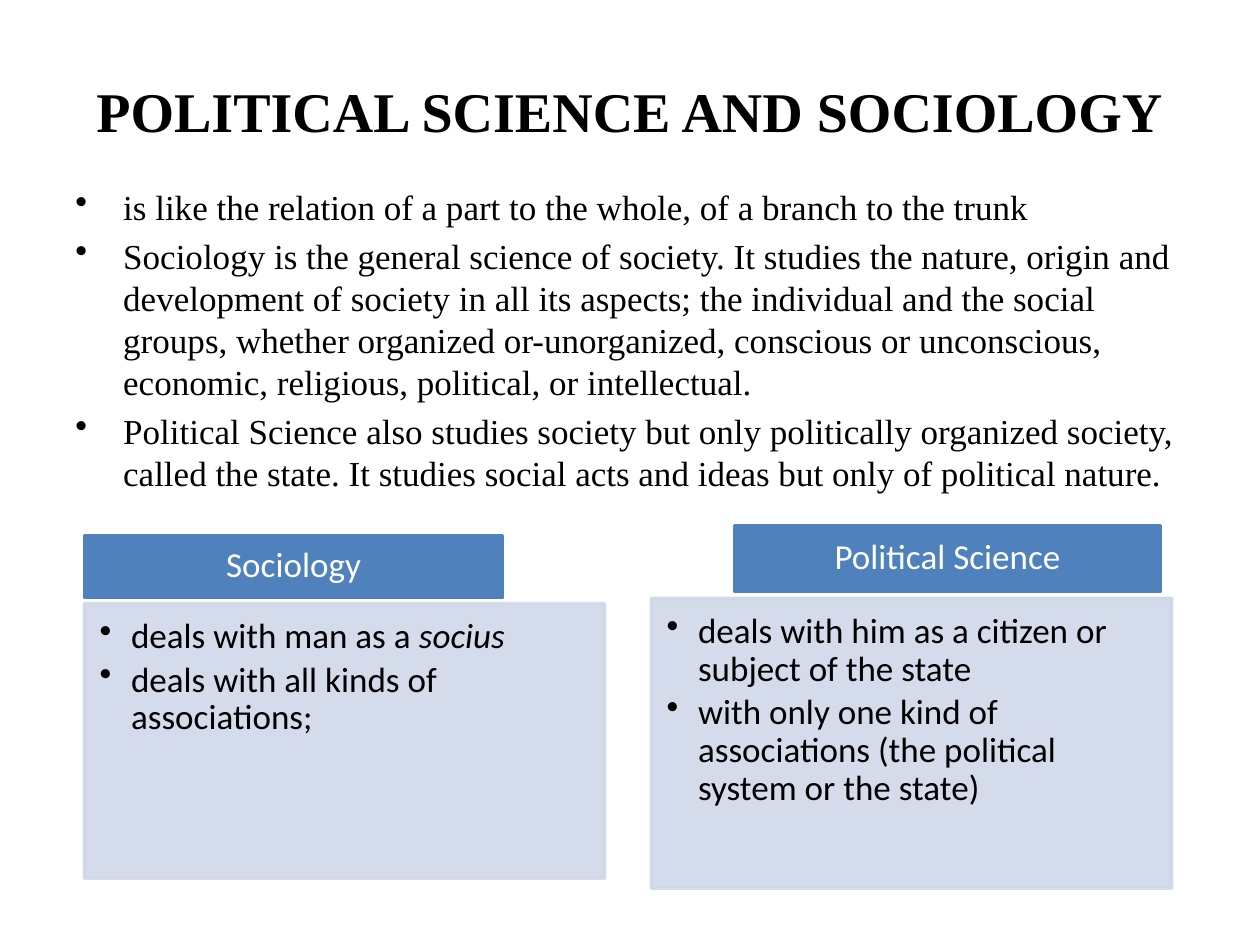
"""Build the slide comparing political science with sociology."""
from dataclasses import dataclass

from lxml import etree
from pptx import Presentation, util as u
from pptx.dml import color
from pptx.enum import shapes, text
from pptx.oxml import ns

PX = 9144
COLORS = {"ink": "000000", "white": "FFFFFF", "header": "4F81BD", "panel": "D0D8E8"}
SERIF, SANS = "Times New Roman", "Calibri"


@dataclass(frozen=True)
class Box:
    left: int
    top: int
    width: int
    height: int

    def emu(self) -> list[int]:
        return [side * PX for side in (self.left, self.top, self.width, self.height)]


@dataclass(frozen=True)
class Style:
    font: str
    size: int = 20
    ink: str = "ink"
    bold: bool = False
    centered: bool = False
    indent: int = 0
    before: int = 0
    after: int = 0
    spacing: float = 1.0
    margins: tuple[int, int, int, int] = (10, 5, 10, 5)


@dataclass(frozen=True)
class Column:
    heading: str
    header: Box
    points: list[str]
    panel: Box
    emphasis: str = ""


TITLE = Style(SERIF, size=32, bold=True, centered=True)
BODY = Style(SERIF, indent=38, before=4)
HEADER = Style(SANS, ink="white", centered=True, spacing=0.9, margins=(16, 9, 16, 9))
PANEL = Style(SANS, indent=25, after=3, spacing=0.9, margins=(12, 12, 16, 17))

STATEMENTS = [
    "is like the relation of a part to the whole, of a branch to the trunk",
    "Sociology is the general science of society. It studies the nature, origin and "
    "development of society in all its aspects; the individual and the social groups, "
    "whether organized or-unorganized, conscious or unconscious, economic, religious, "
    "political, or intellectual.",
    "Political Science also studies society but only politically organized society, "
    "called the state. It studies social acts and ideas but only of political nature.",
]
COLUMNS = [
    Column("Sociology", Box(67, 425, 332, 49),
           ["deals with man as a socius", "deals with all kinds of associations;"],
           Box(67, 479, 413, 218), emphasis="socius"),
    Column("Political Science", Box(583, 417, 338, 52),
           ["deals with him as a citizen or subject of the state",
            "with only one kind of associations (the political system or the state)"],
           Box(517, 475, 413, 230)),
]


def rgb(name: str) -> color.RGBColor:
    return color.RGBColor.from_string(COLORS[name])


def add_bullet(paragraph, indent: int) -> None:
    properties = paragraph._p.get_or_add_pPr()
    properties.set("marL", str(indent * PX))
    properties.set("indent", str(-indent * PX))
    etree.SubElement(properties, ns.qn("a:buChar")).set("char", "•")


def write(shape, lines: list[str], style: Style, emphasis: str = "") -> None:
    frame = shape.text_frame
    frame.word_wrap = True
    frame.auto_size = text.MSO_AUTO_SIZE.NONE
    frame.vertical_anchor = text.MSO_ANCHOR.TOP if style.indent else text.MSO_ANCHOR.MIDDLE
    frame.margin_left, frame.margin_top, frame.margin_right, frame.margin_bottom = (
        margin * PX for margin in style.margins)
    for index, line in enumerate(lines):
        paragraph = frame.add_paragraph() if index else frame.paragraphs[0]
        if style.indent:
            add_bullet(paragraph, style.indent)
        paragraph.alignment = text.PP_ALIGN.CENTER if style.centered else text.PP_ALIGN.LEFT
        paragraph.line_spacing = style.spacing
        paragraph.space_before = u.Pt(style.before if index else 0)
        paragraph.space_after = u.Pt(style.after)
        paragraph.font.name = style.font
        paragraph.font.size = u.Pt(style.size)
        paragraph.font.bold = style.bold
        paragraph.font.color.rgb = rgb(style.ink)
        if emphasis and line.endswith(emphasis):
            paragraph.add_run().text = line.removesuffix(emphasis)
            run = paragraph.add_run()
            run.text = emphasis
            run.font.italic = True
        else:
            paragraph.add_run().text = line


def add_text(slide, box: Box, lines: list[str], style: Style) -> None:
    write(slide.shapes.add_textbox(*box.emu()), lines, style)


def add_block(slide, box: Box, fill: str, opacity: int = 100):
    shape = slide.shapes.add_shape(shapes.MSO_SHAPE.RECTANGLE, *box.emu())
    shape.shadow.inherit = False
    shape.line.width = u.Pt(2)
    for paint in (shape.fill, shape.line.fill):
        paint.solid()
        paint.fore_color.rgb = rgb(fill)
    if opacity < 100:
        for tint in shape._element.spPr.iter(ns.qn("a:srgbClr")):
            etree.SubElement(tint, ns.qn("a:alpha")).set("val", str(opacity * 1000))
    return shape


def add_column(slide, column: Column) -> None:
    write(add_block(slide, column.header, "header"), [column.heading], HEADER)
    panel = add_block(slide, column.panel, "panel", opacity=90)
    write(panel, column.points, PANEL, column.emphasis)


def main() -> None:
    presentation = Presentation()
    presentation.slide_width, presentation.slide_height = 1000 * PX, 750 * PX
    slide = presentation.slides.add_slide(presentation.slide_layouts[6])
    add_text(slide, Box(50, 25, 900, 125), ["POLITICAL SCIENCE AND SOCIOLOGY"], TITLE)
    add_text(slide, Box(50, 142, 900, 528), STATEMENTS, BODY)
    for column in COLUMNS:
        add_column(slide, column)
    presentation.save("out.pptx")


if __name__ == "__main__":
    main()
